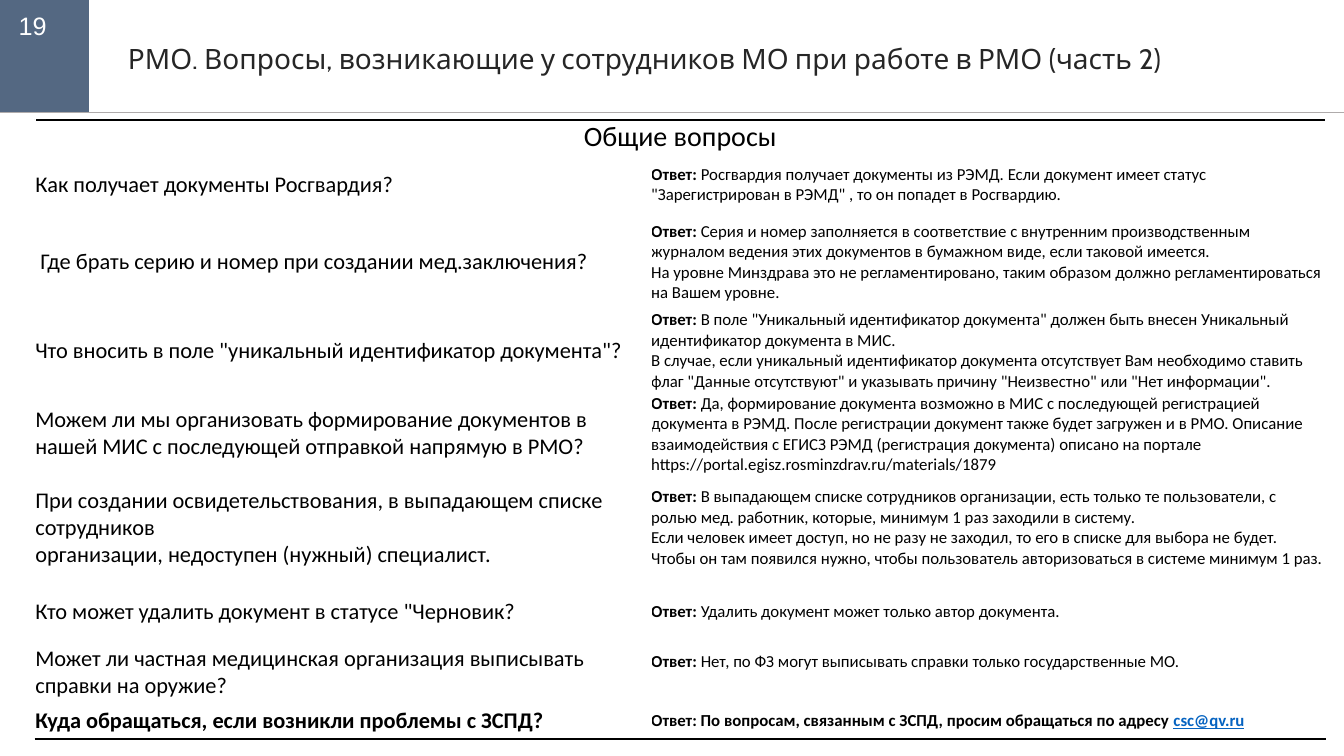
from dataclasses import dataclass

from lxml.etree import SubElement
from pptx import Presentation
from pptx.dml.color import RGBColor
from pptx.enum.shapes import MSO_CONNECTOR, MSO_SHAPE
from pptx.enum.text import MSO_ANCHOR, MSO_AUTO_SIZE, PP_ALIGN
from pptx.oxml import parse_xml
from pptx.oxml.ns import nsdecls, qn
from pptx.slide import Slide
from pptx.table import Table, _Cell as Cell
from pptx.text.text import _Paragraph as Paragraph
from pptx.util import Cm, Pt

WHITE = RGBColor(0xFF, 0xFF, 0xFF)
BLACK = RGBColor(0x00, 0x00, 0x00)
SLATE = RGBColor(0x54, 0x68, 0x82)
GREY = RGBColor(0xAF, 0xAB, 0xAB)
CHARCOAL = RGBColor(0x26, 0x26, 0x26)
LINK_BLUE = RGBColor(0x05, 0x63, 0xC1)

QUESTION_SIZE = 16
ANSWER_SIZE = 12
HEADING_HEIGHT = 0.38
COLUMN_WIDTHS = (15.52, 16.99)


@dataclass(frozen=True)
class Entry:
    question: str
    answer: str
    height: float
    bold: bool = False
    email: str = ""
    space_below: float = 0


ENTRIES = [
    Entry("Как получает документы Росгвардия?",
          "Росгвардия получает документы из РЭМД. Если документ имеет статус "
          "\"Зарегистрирован в РЭМД\" , то он попадет в Росгвардию.", 1.57),
    Entry(" Где брать серию и номер при создании мед.заключения?",
          "Серия и номер заполняется в соответствие с внутренним производственным журналом "
          "ведения этих документов в бумажном виде, если таковой имеется.\n"
          "На уровне Минздрава это не регламентировано, таким образом должно "
          "регламентироваться на Вашем уровне.", 2.34),
    Entry("Что вносить в поле \"уникальный идентификатор документа\"?",
          "В поле \"Уникальный идентификатор документа\" должен быть внесен Уникальный "
          "идентификатор документа в МИС.\n"
          "В случае, если уникальный идентификатор документа отсутствует Вам необходимо ставить "
          "флаг \"Данные отсутствуют\" и указывать причину \"Неизвестно\" или "
          "\"Нет информации\".", 2.13),
    Entry("Можем ли мы организовать формирование документов в нашей МИС с последующей "
          "отправкой напрямую в РМО?",
          "Да, формирование документа возможно в МИС с последующей регистрацией документа в "
          "РЭМД. После регистрации документ также будет загружен и в РМО. Описание "
          "взаимодействия с ЕГИСЗ РЭМД (регистрация документа) описано на портале "
          "https://portal.egisz.rosminzdrav.ru/materials/1879", 1.93),
    Entry("При создании освидетельствования, в выпадающем списке сотрудников\n"
          "организации, недоступен (нужный) специалист.",
          "В выпадающем списке сотрудников организации, есть только те пользователи, с ролью "
          "мед. работник, которые, минимум 1 раз заходили в систему.\n"
          "Если человек имеет доступ, но не разу не заходил, то его в списке для выбора не "
          "будет. Чтобы он там появился нужно, чтобы пользователь авторизоваться в системе "
          "минимум 1 раз.", 2.72),
    Entry("Кто может удалить документ в статусе \"Черновик?",
          "Удалить документ может только автор документа.", 1.5),
    Entry("Может ли частная медицинская организация выписывать справки на оружие?",
          "Нет, по ФЗ могут выписывать справки только государственные МО.", 1.55,
          space_below=0.5),
    Entry("Куда обращаться, если возникли проблемы с ЗСПД?",
          "По вопросам, связанным с ЗСПД, просим обращаться по адресу ", 0.91,
          bold=True, email="csc@qv.ru"),
]


def write(paragraph: Paragraph, text: str, *, size: float, font: str = "Calibri",
          color: RGBColor = BLACK, bold: bool = False, underline: bool = False) -> None:
    """Append formatted text, turning each newline into a line break."""
    for index, line in enumerate(text.split("\n")):
        if index:
            paragraph.add_line_break()
        run = paragraph.add_run()
        run.text = line
        run.font.size = Pt(size)
        run.font.name = font
        run.font.bold = bold
        run.font.underline = underline
        run.font.color.rgb = color


def format_cell(cell: Cell, space_below: float = 0) -> Paragraph:
    cell.margin_left = cell.margin_right = cell.margin_top = 0
    cell.margin_bottom = Cm(space_below)
    cell.vertical_anchor = MSO_ANCHOR.MIDDLE
    cell.fill.solid()
    cell.fill.fore_color.rgb = WHITE
    return cell.text_frame.paragraphs[0]


def add_rule(cell: Cell, side: str) -> None:
    """Draw a 2 pt black border; side is lnT or lnB."""
    border = parse_xml(
        f'<a:{side} {nsdecls("a")} w="{Pt(2)}"><a:solidFill>'
        f'<a:srgbClr val="{BLACK}"/></a:solidFill></a:{side}>')
    cell._tc.get_or_add_tcPr().insert(0, border)


def add_header(slide: Slide) -> None:
    # Number block
    block = slide.shapes.add_shape(MSO_SHAPE.RECTANGLE, 0, 0, Cm(2.24), Cm(2.84))
    block.shadow.inherit = False
    block.fill.solid()
    block.fill.fore_color.rgb = SLATE
    block.line.fill.background()

    # Line under the header
    divider = slide.shapes.add_connector(
        MSO_CONNECTOR.STRAIGHT, 0, Cm(2.83), Cm(33.9), Cm(2.83))
    divider.line.color.rgb = GREY
    divider.line.width = Pt(0.5)
    SubElement(divider._element.spPr, qn("a:effectLst"))

    page_number = slide.shapes.add_textbox(Cm(0.22), Cm(0.13), Cm(1.22), Cm(1.03)).text_frame
    page_number.word_wrap = False
    write(page_number.paragraphs[0], "19", size=18, font="Arial", color=WHITE)

    # Title
    title = slide.shapes.title
    title.left, title.top, title.width, title.height = Cm(2.97), Cm(0.91), Cm(27.36), Cm(1.12)
    title.text_frame.auto_size = MSO_AUTO_SIZE.NONE
    title.text_frame.word_wrap = True
    heading = title.text_frame.paragraphs[0]
    heading.alignment = PP_ALIGN.LEFT
    write(heading, "РМО. Вопросы, возникающие у сотрудников МО при работе в РМО (часть 2)",
          size=20, font="Cabin", color=CHARCOAL)


def fill_entry(table: Table, row: int, entry: Entry) -> None:
    table.rows[row].height = Cm(entry.height)
    question = format_cell(table.cell(row, 0))
    write(question, entry.question, size=QUESTION_SIZE, bold=entry.bold)
    answer = format_cell(table.cell(row, 1), entry.space_below)
    write(answer, "Ответ: ", size=ANSWER_SIZE, bold=True)
    write(answer, entry.answer, size=ANSWER_SIZE, bold=entry.bold)
    if entry.email:
        write(answer, entry.email, size=ANSWER_SIZE, bold=entry.bold,
              color=LINK_BLUE, underline=True)


def add_questions(slide: Slide) -> None:
    total_height = HEADING_HEIGHT + sum(entry.height for entry in ENTRIES)
    questions = slide.shapes.add_table(
        len(ENTRIES) + 1, len(COLUMN_WIDTHS), Cm(0.89), Cm(3.02),
        Cm(sum(COLUMN_WIDTHS)), Cm(total_height)).table
    questions.first_row = questions.horz_banding = False
    for column, width in zip(questions.columns, COLUMN_WIDTHS):
        column.width = Cm(width)

    # Heading across both columns
    questions.rows[0].height = Cm(HEADING_HEIGHT)
    questions.cell(0, 0).merge(questions.cell(0, 1))
    for cell in questions.rows[0].cells:
        format_cell(cell)
    heading = questions.cell(0, 0).text_frame.paragraphs[0]
    heading.alignment = PP_ALIGN.CENTER
    write(heading, "Общие вопросы", size=20)

    for row, entry in enumerate(ENTRIES, start=1):
        fill_entry(questions, row, entry)

    # Rules above and below the table
    for column in range(len(COLUMN_WIDTHS)):
        add_rule(questions.cell(0, column), "lnT")
        add_rule(questions.cell(len(ENTRIES), column), "lnB")


def main() -> None:
    presentation = Presentation()
    presentation.slide_width, presentation.slide_height = Cm(33.87), Cm(19.05)
    slide = presentation.slides.add_slide(presentation.slide_layouts.get_by_name("Title Only"))
    add_header(slide)
    add_questions(slide)
    presentation.save("out.pptx")


if __name__ == "__main__":
    main()
